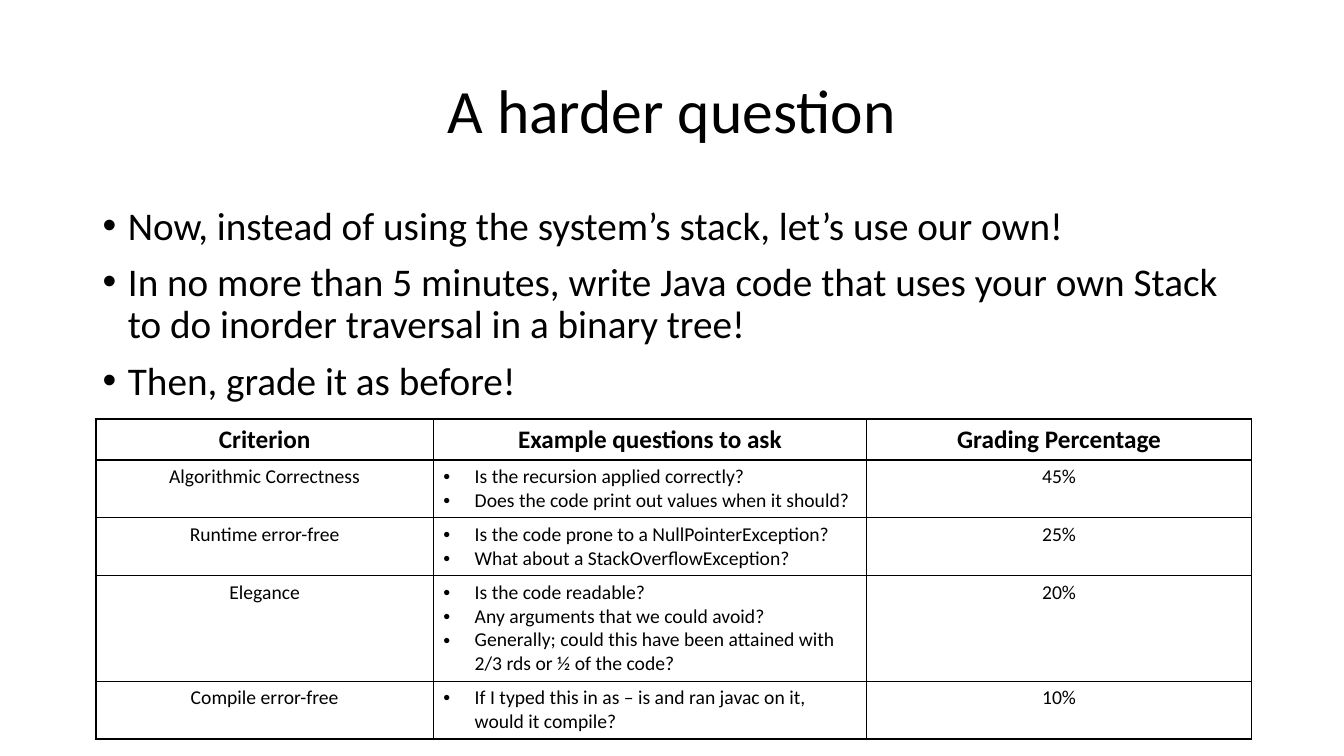
from dataclasses import dataclass

from lxml.etree import SubElement
from pptx import Presentation
from pptx.dml.color import RGBColor
from pptx.enum.text import MSO_ANCHOR, MSO_AUTO_SIZE, PP_ALIGN
from pptx.oxml.ns import qn
from pptx.util import Cm, Pt

HEADING = "A harder question"
INSTRUCTIONS = [
    "Now, instead of using the system’s stack, let’s use our own!",
    "In no more than 5 minutes, write Java code that uses your own Stack to do inorder traversal in a binary tree!",
    "Then, grade it as before!",
]
RUBRIC_HEADER = ["Criterion", "Example questions to ask", "Grading Percentage"]
RUBRIC = [
    ("Algorithmic Correctness",
     ["Is the recursion applied correctly?",
      "Does the code print out values when it should?"],
     "45%"),
    ("Runtime error-free",
     ["Is the code prone to a NullPointerException?",
      "What about a StackOverflowException?"],
     "25%"),
    ("Elegance",
     ["Is the code readable?",
      "Any arguments that we could avoid?",
      "Generally; could this have been attained with 2/3 rds or ½ of the code?"],
     "20%"),
    ("Compile error-free",
     ["If I typed this in as – is and ran javac on it, would it compile?"],
     "10%"),
]


@dataclass(frozen=True)
class Theme:
    font: str = "Calibri"
    ink: str = "000000"
    paper: str = "FFFFFF"
    heading: int = 44
    instruction: int = 28
    column_title: int = 18
    cell: int = 14
    border: int = 1


THEME = Theme()
MARGIN, CONTENT_WIDTH = Cm(2.33), Cm(29.21)
RUBRIC_LEFT, RUBRIC_TOP = Cm(2.42), Cm(10.56)
COLUMN_WIDTHS = [Cm(8.5), Cm(10.92), Cm(9.7)]
ROW_HEIGHT = Cm(1.03)


def write(frame, text, size, bold=False, align=PP_ALIGN.LEFT, hang=None, line=None, before=0):
    lines = [text] if isinstance(text, str) else text
    for index, content in enumerate(lines):
        paragraph = frame.paragraphs[0] if index == 0 else frame.add_paragraph()
        paragraph.alignment = align
        paragraph.space_before = Pt(before)
        if line:
            paragraph.line_spacing = line
        run = paragraph.add_run()
        run.text = content
        run.font.name = THEME.font
        run.font.size = Pt(size)
        run.font.bold = bold
        run.font.color.rgb = RGBColor.from_string(THEME.ink)
        if hang:
            properties = paragraph._p.get_or_add_pPr()
            properties.set("marL", str(hang))
            properties.set("indent", str(-hang))
            SubElement(properties, qn("a:buFont"), typeface="Arial")
            SubElement(properties, qn("a:buChar"), char="•")


def place(placeholder, top, height, anchor):
    placeholder.left, placeholder.top = MARGIN, top
    placeholder.width, placeholder.height = CONTENT_WIDTH, height
    frame = placeholder.text_frame
    frame.auto_size = MSO_AUTO_SIZE.NONE
    frame.vertical_anchor = anchor
    return frame


def outline(cell):
    properties = cell._tc.get_or_add_tcPr()
    for side in ("a:lnL", "a:lnR", "a:lnT", "a:lnB"):
        edge = SubElement(properties, qn(side), w=str(Pt(THEME.border)))
        SubElement(SubElement(edge, qn("a:solidFill")), qn("a:srgbClr"), val=THEME.ink)
    cell.fill.solid()
    cell.fill.fore_color.rgb = RGBColor.from_string(THEME.paper)


def add_rubric(slide):
    rows = [RUBRIC_HEADER, *RUBRIC]
    rubric = slide.shapes.add_table(
        len(rows), len(COLUMN_WIDTHS), RUBRIC_LEFT, RUBRIC_TOP,
        sum(COLUMN_WIDTHS), ROW_HEIGHT * len(rows)).table
    rubric.first_row = rubric.horz_banding = False
    for column, width in zip(rubric.columns, COLUMN_WIDTHS):
        column.width = width
    for row_index, row in enumerate(rows):
        is_header = row_index == 0
        for column_index, entry in enumerate(row):
            cell = rubric.cell(row_index, column_index)
            is_list = isinstance(entry, list)
            write(cell.text_frame, entry,
                  size=THEME.column_title if is_header else THEME.cell,
                  bold=is_header,
                  align=PP_ALIGN.LEFT if is_list else PP_ALIGN.CENTER,
                  hang=Cm(0.79) if is_list else None)
            outline(cell)


def main():
    deck = Presentation()
    deck.slide_width, deck.slide_height = Cm(33.87), Cm(19.05)
    slide = deck.slides.add_slide(deck.slide_layouts[1])
    heading = place(slide.shapes.title, Cm(1.01), Cm(3.68), MSO_ANCHOR.MIDDLE)
    write(heading, HEADING, THEME.heading, align=PP_ALIGN.CENTER, line=0.9)
    instructions = place(slide.placeholders[1], Cm(5.07), Cm(12.09), MSO_ANCHOR.TOP)
    write(instructions, INSTRUCTIONS, THEME.instruction, hang=Cm(0.64), line=0.9, before=10)
    add_rubric(slide)
    deck.save("out.pptx")


if __name__ == "__main__":
    main()
